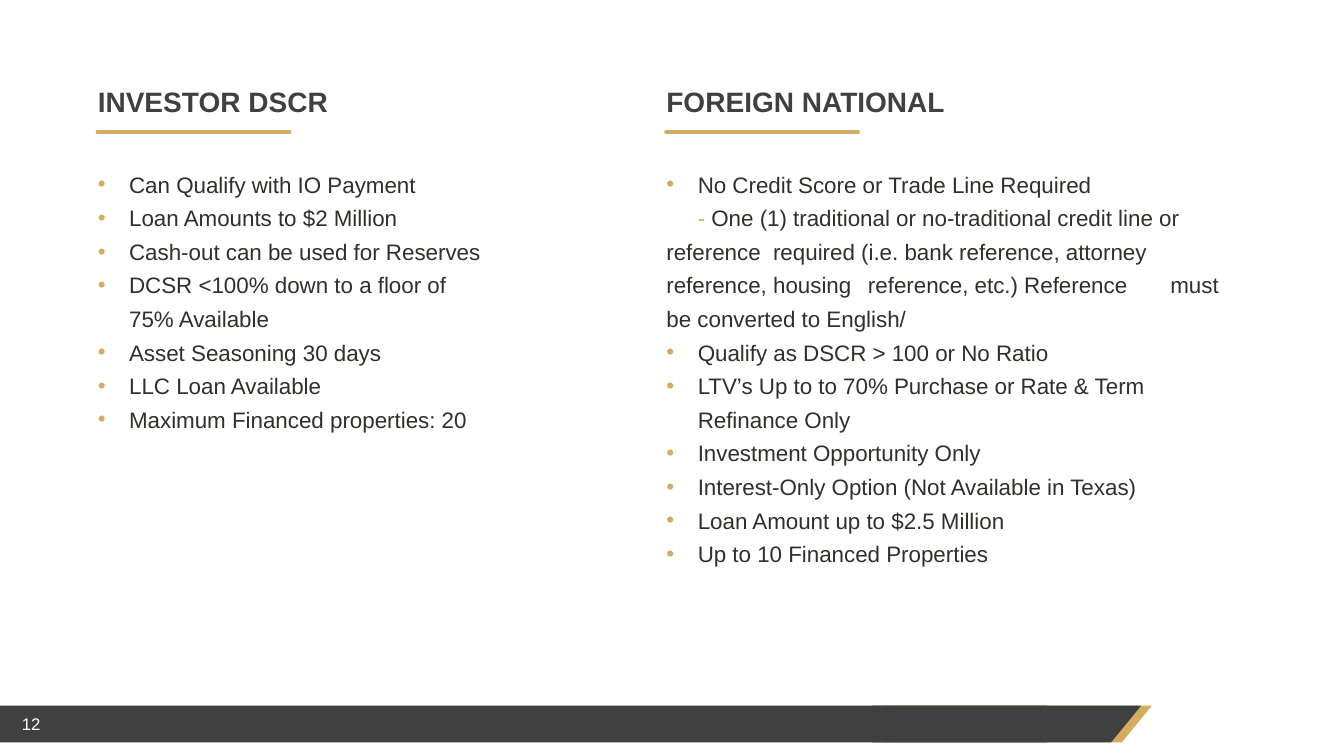
from lxml import etree
from pptx import Presentation
from pptx.dml.color import RGBColor
from pptx.enum import shapes, text
from pptx.oxml import ns
from pptx.util import Cm, Pt

COLORS = {"gold": "D3AB61", "charcoal": "404040", "ink": "302F2B", "white": "FFFFFF"}
FONT = "Arial"
PAGE_NUMBER = "12"

# A plain string is a bullet; a tuple is an unbulleted (marker, text) paragraph.
COLUMNS = [
    {"left": 2.21, "heading": "INVESTOR DSCR", "heading_width": 6.55,
     "list_width": 10.46, "list_height": 7.01,
     "items": [
         "Can Qualify with IO Payment",
         "Loan Amounts to $2 Million",
         "Cash-out can be used for Reserves",
         "DCSR <100% down to a floor of 75% Available",
         "Asset Seasoning 30 days",
         "LLC Loan Available",
         "Maximum Financed properties: 20",
     ]},
    {"left": 16.54, "heading": "FOREIGN NATIONAL", "heading_width": 15.14,
     "list_width": 14.73, "list_height": 11.28,
     "items": [
         "No Credit Score or Trade Line Required",
         ("-", " One (1) traditional or no-traditional credit line or "
               "\treference  required (i.e. bank reference, attorney "
               "\treference, housing \treference, etc.) Reference "
               "\tmust be converted to English/"),
         "Qualify as DSCR > 100 or No Ratio",
         "LTV’s Up to to 70% Purchase or Rate & Term Refinance Only",
         "Investment Opportunity Only",
         "Interest-Only Option (Not Available in Texas)",
         "Loan Amount up to $2.5 Million",
         "Up to 10 Financed Properties",
     ]},
]

HEADING_TOP, HEADING_HEIGHT = 2.01, 1.12
RULE_TOP, RULE_INSET, RULE_WIDTH = 3.33, 0.25, 4.83
LIST_TOP, LIST_INDENT = 4.01, 0.79
BAR_TOP, BAR_HEIGHT, BAR_WIDTH = 17.78, 0.93, 26.39
TIP_LEFT, TIP_RIGHT, TIP_SLANT, TIP_OFFSET = 21.98, 28.76, 0.76, 0.27


def rgb(name):
    return RGBColor.from_string(COLORS[name])


def place(shape, left, top, width, height):
    shape.left, shape.top, shape.width, shape.height = map(Cm, (left, top, width, height))


def paint(shape, color):
    shape.shadow.inherit = False
    shape.fill.solid()
    shape.fill.fore_color.rgb = rgb(color)
    shape.line.fill.background()


def set_font(font, size, color, bold=False):
    font.name, font.size, font.bold = FONT, Pt(size), bold
    font.color.rgb = rgb(color)


def prepare_frame(shape, anchor=text.MSO_ANCHOR.TOP):
    frame = shape.text_frame
    frame.word_wrap = True
    frame.auto_size = text.MSO_AUTO_SIZE.NONE
    frame.vertical_anchor = anchor
    return frame


def set_bullet(paragraph, bulleted):
    """Hang a gold bullet, or indent only the first line."""
    properties = paragraph._p.get_or_add_pPr()
    indent = Cm(LIST_INDENT)
    properties.set("marL", str(indent if bulleted else 0))
    properties.set("indent", str(-indent if bulleted else indent))
    if not bulleted:
        etree.SubElement(properties, ns.qn("a:buNone"))
        return
    color = etree.SubElement(properties, ns.qn("a:buClr"))
    etree.SubElement(color, ns.qn("a:srgbClr"), val=COLORS["gold"])
    etree.SubElement(properties, ns.qn("a:buFont"), typeface=FONT)
    etree.SubElement(properties, ns.qn("a:buChar"), char="•")


def fill_list(frame, items):
    for index, item in enumerate(items):
        paragraph = frame.paragraphs[0] if index == 0 else frame.add_paragraph()
        bulleted = isinstance(item, str)
        set_bullet(paragraph, bulleted)
        paragraph.line_spacing = 1.25
        paragraph.space_before = Pt(0)
        set_font(paragraph.font, 16, "ink")
        for part in [item] if bulleted else item:
            paragraph.add_run().text = part
        if not bulleted:
            paragraph.runs[0].font.color.rgb = rgb("gold")


def add_rule(slide, left):
    start = left + RULE_INSET
    rule = slide.shapes.add_connector(
        shapes.MSO_CONNECTOR.STRAIGHT,
        Cm(start), Cm(RULE_TOP), Cm(start + RULE_WIDTH), Cm(RULE_TOP))
    rule.line.color.rgb = rgb("gold")
    rule.line.width = Pt(3)
    rule.line._get_or_add_ln().set("cap", "rnd")
    etree.SubElement(rule._element.spPr, ns.qn("a:effectLst"))


def add_footer(slide):
    bottom = BAR_TOP + BAR_HEIGHT
    for color, shift in (("gold", TIP_OFFSET), ("charcoal", 0)):
        left, right = TIP_LEFT + shift, TIP_RIGHT + shift
        builder = slide.shapes.build_freeform(Cm(left), Cm(BAR_TOP))
        builder.add_line_segments([
            (Cm(right), Cm(BAR_TOP)),
            (Cm(right - TIP_SLANT), Cm(bottom)),
            (Cm(left), Cm(bottom))])
        paint(builder.convert_to_shape(), color)
    bar = slide.shapes.add_shape(
        shapes.MSO_SHAPE.RECTANGLE, 0, Cm(BAR_TOP), Cm(BAR_WIDTH), Cm(BAR_HEIGHT))
    paint(bar, "charcoal")
    number = slide.shapes.add_textbox(Cm(0.3), Cm(17.63), Cm(2.34), Cm(1.24))
    paragraph = prepare_frame(number, text.MSO_ANCHOR.MIDDLE).paragraphs[0]
    paragraph.text = PAGE_NUMBER
    set_font(paragraph.font, 12, "white")


def add_column(slide, column, heading, body):
    left = column["left"]
    place(heading, left, HEADING_TOP, column["heading_width"], HEADING_HEIGHT)
    paragraph = prepare_frame(heading).paragraphs[0]
    paragraph.text = column["heading"]
    paragraph.space_before = Pt(0)
    set_font(paragraph.font, 20, "charcoal", bold=True)
    add_rule(slide, left)
    place(body, left, LIST_TOP, column["list_width"], column["list_height"])
    fill_list(prepare_frame(body), column["items"])


def main():
    presentation = Presentation()
    presentation.slide_width, presentation.slide_height = Cm(33.87), Cm(19.05)
    slide = presentation.slides.add_slide(
        presentation.slide_layouts.get_by_name("Comparison"))
    title, *placeholders = slide.placeholders
    title._element.getparent().remove(title._element)
    add_footer(slide)
    for column, heading, body in zip(COLUMNS, placeholders[::2], placeholders[1::2]):
        add_column(slide, column, heading, body)
    presentation.save("out.pptx")


if __name__ == "__main__":
    main()
